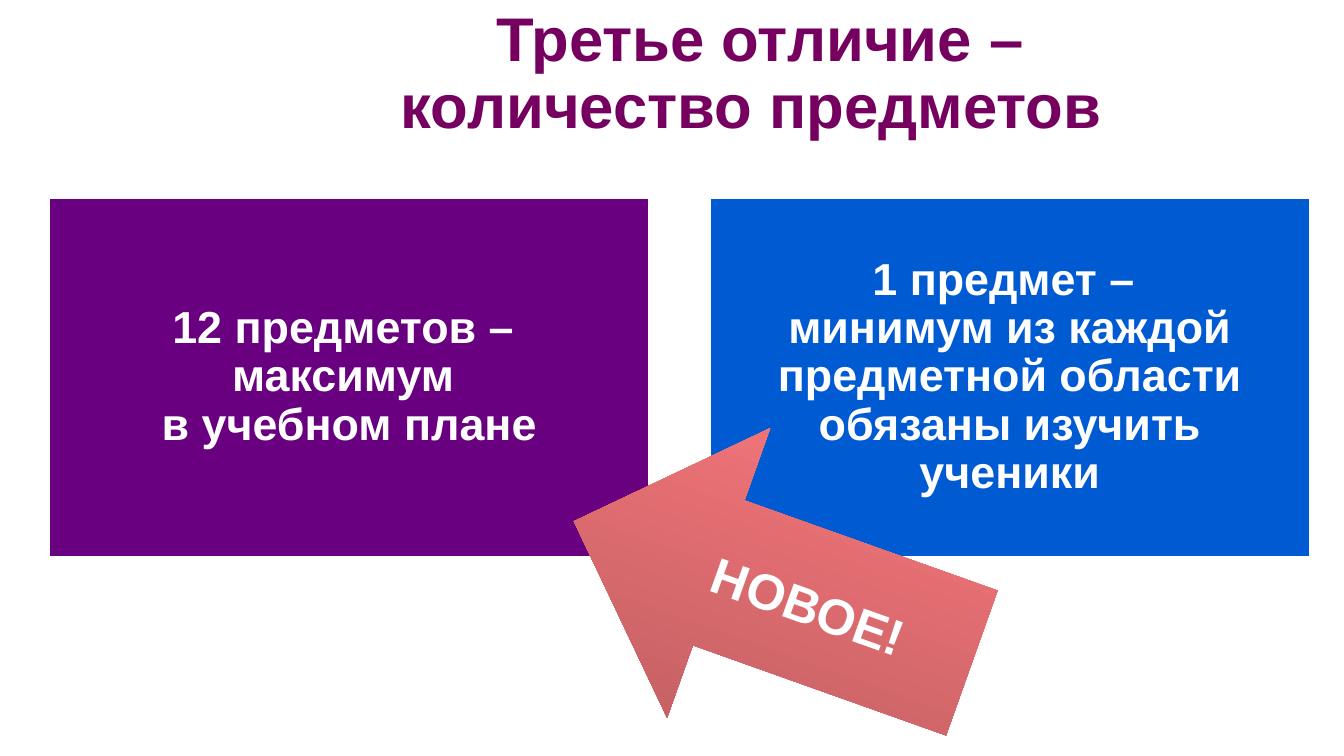
import pptx
import pptx.util
import pptx.dml.color
import pptx.enum.shapes
import pptx.enum.text

Inches = pptx.util.Inches
RGB = pptx.dml.color.RGBColor.from_string
Shape = pptx.enum.shapes.MSO_SHAPE

theme = {
    "font": "Arial",
    "title": "75005F", "plum": "68007F", "blue": "005BD3",
    "white": "FFFFFF", "rose": "FF7C80", "brick": "B6595C",
    "head": 44, "body": 32, "call": 36,
}


def write(frame, lines, size, color, space):
    frame.vertical_anchor = pptx.enum.text.MSO_ANCHOR.MIDDLE
    para = frame.paragraphs[0]
    para.alignment = pptx.enum.text.PP_ALIGN.CENTER
    para.line_spacing = space
    for i, line in enumerate(lines):
        if i:
            para.add_line_break()
        run = para.add_run()
        run.text = line
        run.font.name = theme["font"]
        run.font.size = pptx.util.Pt(theme[size])
        run.font.bold = True
        run.font.color.rgb = RGB(theme[color])


deck = pptx.Presentation()
deck.slide_width = Inches(13.33)
deck.slide_height = Inches(7.5)
slide = deck.slides.add_slide(deck.slide_layouts[5])

title = slide.shapes.title
title.left, title.top = Inches(1.75), Inches(0.05)
title.width, title.height = Inches(11.58), Inches(1.39)
title.text_frame.word_wrap = True
write(title.text_frame, ["Третье отличие –", "количество предметов "],
      "head", "title", 0.9)

cards = [
    ("plum", ["12 предметов – ", "максимум ", "в учебном плане"]),
    ("blue", ["1 предмет – ",
              "минимум из каждой предметной области обязаны изучить ученики"]),
]
for i, (fill, lines) in enumerate(cards):
    card = slide.shapes.add_shape(
        Shape.RECTANGLE, Inches(0.49 + i * 6.55), Inches(1.96),
        Inches(5.95), Inches(3.57))
    card.shadow.inherit = False
    card.fill.solid()
    card.fill.fore_color.rgb = RGB(theme[fill])
    card.line.color.rgb = RGB(theme["white"])
    card.line.width = pptx.util.Pt(1.5)
    frame = card.text_frame
    frame.word_wrap = True
    frame.margin_left = frame.margin_right = Inches(0.13)
    frame.margin_top = frame.margin_bottom = Inches(0.13)
    write(frame, lines, "body", "white", 0.9)

arrow = slide.shapes.add_shape(
    Shape.LEFT_ARROW, Inches(5.57), Inches(4.35), Inches(4.19), Inches(3.05))
arrow.rotation = 19.6
arrow.shadow.inherit = False
arrow.line.fill.background()
arrow.fill.gradient()
arrow.fill.gradient_angle = 270
for stop, color, place in zip(arrow.fill.gradient_stops, ("rose", "brick"), (0, 1)):
    stop.color.rgb = RGB(theme[color])
    stop.position = place
arrow.text_frame.word_wrap = False
write(arrow.text_frame, ["НОВОЕ!"], "call", "white", 1.0)

deck.save("out.pptx")
